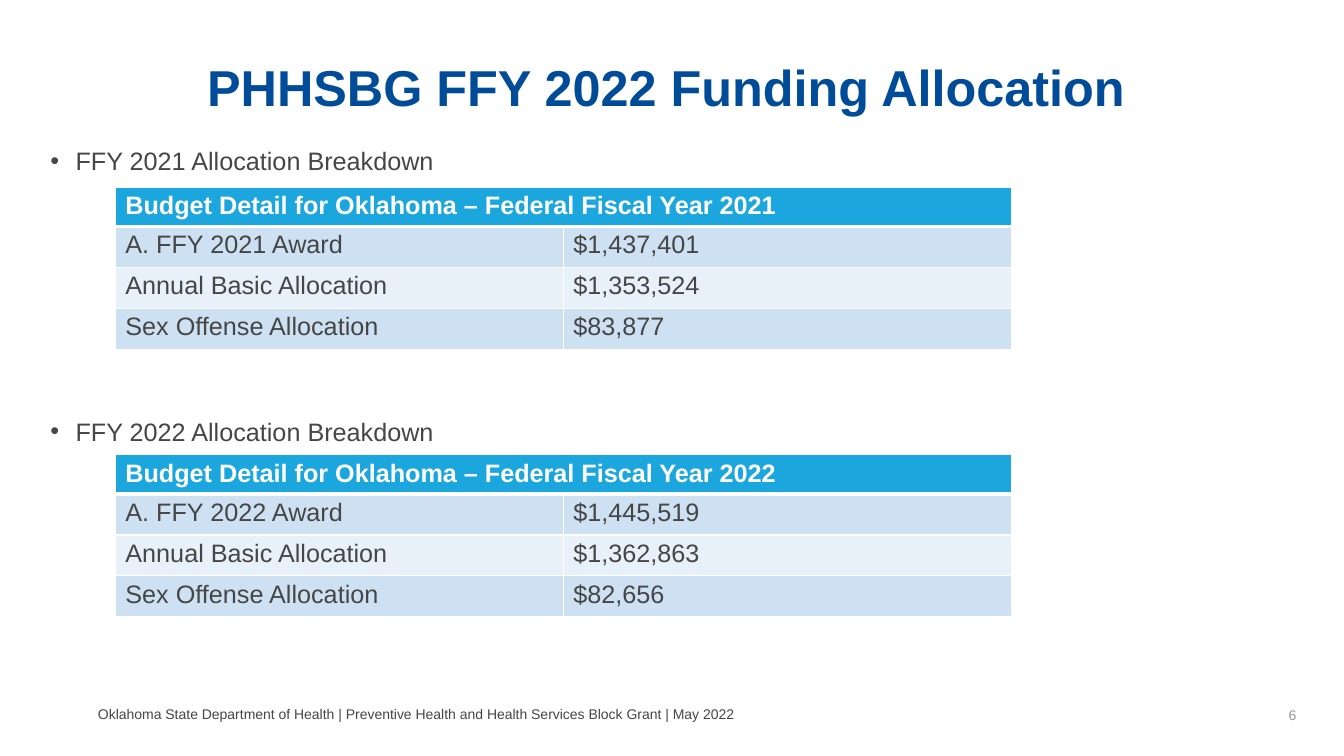
from lxml import etree
from pptx import Presentation
from pptx.dml.color import RGBColor
from pptx.enum.text import MSO_ANCHOR, PP_ALIGN
from pptx.oxml.ns import qn
from pptx.util import Pt

LEFT, CENTER, RIGHT = PP_ALIGN.LEFT, PP_ALIGN.CENTER, PP_ALIGN.RIGHT
TOP, MIDDLE = MSO_ANCHOR.TOP, MSO_ANCHOR.MIDDLE

THEME = {
    "font": "Arial",
    "title": {"size": Pt(36), "bold": True, "color": "004C99"},
    "body": {"size": Pt(18), "bold": False, "color": "464646"},
    "header": {"size": Pt(18), "bold": True, "color": "FFFFFF"},
    "footer": {"size": Pt(10), "bold": False, "color": "464646"},
    "number": {"size": Pt(10), "bold": False, "color": "949494"},
    "header_fill": "1CA6DE",
    "bands": ["CDE1F2", "E8F1F9"],
    "border": "FFFFFF",
}


def write(frame, text, style, align=LEFT):
    paragraph = frame.paragraphs[0]
    paragraph.alignment = align
    run = paragraph.add_run()
    run.text = text
    run.font.name = THEME["font"]
    run.font.color.rgb = RGBColor.from_string(THEME[style]["color"])
    for attribute in ("size", "bold"):
        setattr(run.font, attribute, THEME[style][attribute])
    return paragraph


def add_text(box, text, style, align=LEFT, anchor=TOP, left_inset=0):
    """Place a wrapped text box; box is left, top, width, height in points."""
    frame = slide.shapes.add_textbox(*map(Pt, box)).text_frame
    layout = {"word_wrap": True, "vertical_anchor": anchor, "margin_left": Pt(left_inset),
              "margin_right": Pt(7.2), "margin_top": Pt(3.6), "margin_bottom": Pt(3.6)}
    for attribute, value in layout.items():
        setattr(frame, attribute, value)
    return write(frame, text, style, align)


deck = Presentation()
deck.slide_width, deck.slide_height = Pt(960), Pt(540)
slide = deck.slides.add_slide(deck.slide_layouts[6])

add_text((36, 36.7, 887, 62), "PHHSBG FFY 2022 Funding Allocation", "title", CENTER)

# Yearly budgets: heading top, table top, year, amounts
AMOUNT_LABELS = ["A. FFY {} Award", "Annual Basic Allocation", "Sex Offense Allocation"]
BUDGETS = [
    (100.6, 133.9, 2021, ["$1,437,401", "$1,353,524", "$83,877"]),
    (293.5, 324.9, 2022, ["$1,445,519", "$1,362,863", "$82,656"]),
]
TABLE_LEFT, COLUMN_WIDTH = 82.4, 320
HEADER_HEIGHT, ROW_HEIGHT = 27.2, 29.2

for heading_top, table_top, year, amounts in BUDGETS:
    heading = add_text((36, heading_top, 897, 30), f"FFY {year} Allocation Breakdown", "body")
    indent = heading._p.get_or_add_pPr()
    indent.set("marL", str(Pt(18)))
    indent.set("indent", str(Pt(-18)))
    etree.SubElement(indent, qn("a:buFont")).set("typeface", THEME["font"])
    etree.SubElement(indent, qn("a:buChar")).set("char", "•")

    budget = slide.shapes.add_table(
        len(amounts) + 1, 2, Pt(TABLE_LEFT), Pt(table_top), Pt(2 * COLUMN_WIDTH),
        Pt(HEADER_HEIGHT + len(amounts) * ROW_HEIGHT)).table
    for column in budget.columns:
        column.width = Pt(COLUMN_WIDTH)

    rows = [(f"Budget Detail for Oklahoma – Federal Fiscal Year {year}", "")]
    rows += [(label.format(year), amount) for label, amount in zip(AMOUNT_LABELS, amounts)]
    budget.cell(0, 0).merge(budget.cell(0, 1))
    for row_index, texts in enumerate(rows):
        is_header = row_index == 0
        budget.rows[row_index].height = Pt(HEADER_HEIGHT if is_header else ROW_HEIGHT)
        fill = THEME["header_fill"] if is_header else THEME["bands"][(row_index - 1) % 2]
        for column_index, text in enumerate(texts):
            cell = budget.cell(row_index, column_index)
            cell.margin_top = cell.margin_bottom = Pt(3.2)
            if text:
                write(cell.text_frame, text, "header" if is_header else "body")
            edge_widths = {"a:lnL": 1, "a:lnR": 1, "a:lnT": 3 if row_index == 1 else 1,
                           "a:lnB": 3 if is_header else 1}
            properties = cell._tc.get_or_add_tcPr()
            for edge, width in edge_widths.items():
                line = etree.SubElement(properties, qn(edge), w=str(Pt(width)))
                solid = etree.SubElement(line, qn("a:solidFill"))
                etree.SubElement(solid, qn("a:srgbClr"), val=THEME["border"])
            cell.fill.solid()
            cell.fill.fore_color.rgb = RGBColor.from_string(fill)

add_text((717, 502.5, 216, 16), "6", "number", RIGHT, MIDDLE, 7.2)
add_text((70, 502, 641, 16),
         "Oklahoma State Department of Health | Preventive Health and Health Services "
         "Block Grant | May 2022", "footer", LEFT, MIDDLE)

deck.save("out.pptx")
